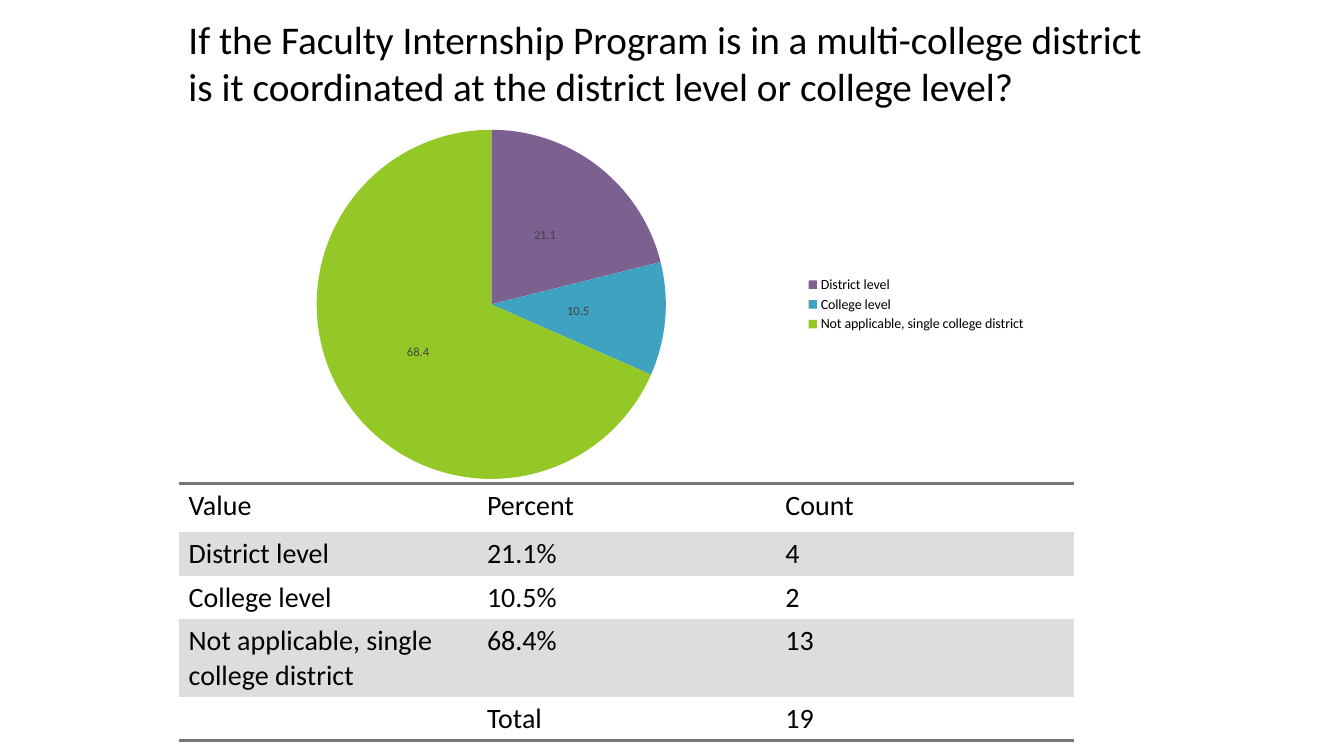
from dataclasses import dataclass

from lxml.etree import SubElement
from pptx import Presentation
from pptx.chart.data import CategoryChartData
from pptx.dml.color import RGBColor
from pptx.enum.chart import XL_CHART_TYPE as ChartType
from pptx.enum.chart import XL_LABEL_POSITION as LabelPosition
from pptx.enum.chart import XL_LEGEND_POSITION as LegendPosition
from pptx.enum.text import MSO_AUTO_SIZE as AutoSize
from pptx.oxml import parse_xml
from pptx.oxml.ns import nsdecls, qn
from pptx.util import Cm, Pt

FONT = "Calibri"
BLACK, WHITE, BAND, RULE = "000000", "FFFFFF", "DDDDDD", "777777"
LABEL_GREY = "444444"
NO_STYLE = "{2D5ABB26-0587-4C30-8999-92F81FD0307C}"
LEFT = Cm(4.5)


@dataclass
class Answer:
    name: str
    percent: float
    count: int
    color: str


ANSWERS = [
    Answer("District level", 21.1, 4, "7C608F"),
    Answer("College level", 10.5, 2, "40A2C1"),
    Answer("Not applicable, single college district", 68.4, 13, "94C826"),
]


def rgb(color: str) -> RGBColor:
    return RGBColor.from_string(color)


def style_font(font, size: float, color: str = BLACK) -> None:
    font.name = FONT
    font.size = Pt(size)
    font.color.rgb = rgb(color)


def add_question(slide) -> None:
    question = slide.shapes.add_textbox(LEFT, Cm(0.25), Cm(24.61), Cm(2.64))
    frame = question.text_frame
    frame.word_wrap = True
    frame.auto_size = AutoSize.SHAPE_TO_FIT_TEXT
    frame.text = ("If the Faculty Internship Program is in a multi-college district "
                  "is it coordinated at the district level or college level?")
    style_font(frame.paragraphs[0].runs[0].font, 28)


def add_pie(slide, answers: list[Answer]) -> None:
    data = CategoryChartData()
    data.categories = [answer.name for answer in answers]
    data.add_series("0: Series", [answer.percent for answer in answers])
    pie = slide.shapes.add_chart(ChartType.PIE, LEFT, Cm(2.92), Cm(21.62), Cm(9.5), data).chart
    style_font(pie.font, 10)
    pie.has_title = False
    pie.has_legend = True
    pie.legend.position = LegendPosition.RIGHT
    pie.legend.include_in_layout = False
    style_font(pie.legend.font, 10)

    plot = pie.plots[0]
    plot.vary_by_categories = True
    series = plot.series[0]
    for index, answer in enumerate(answers):
        fill = series.points[index].format.fill
        fill.solid()
        fill.fore_color.rgb = rgb(answer.color)
    labels = series.data_labels
    labels.show_value = True
    labels.position = LabelPosition.CENTER
    style_font(labels.font, 9, LABEL_GREY)


def add_rule(cell, side: str) -> None:
    line = parse_xml(f'<a:{side} {nsdecls("a")} w="{Pt(2)}"/>')
    SubElement(SubElement(line, qn("a:solidFill")), qn("a:srgbClr"), val=RULE)
    cell._tc.get_or_add_tcPr().insert(0, line)


def add_answer_table(slide, answers: list[Answer]) -> None:
    total = sum(answer.count for answer in answers)
    rows = [
        ("Value", "Percent", "Count"),
        *((a.name, f"{a.percent}%", str(a.count)) for a in answers),
        ("", "Total", str(total)),
    ]
    heights = [1.22, 1.04, 1.04, 1.83, 1.04]
    table = slide.shapes.add_table(len(rows), 3, LEFT, Cm(12.18), Cm(22.58), Cm(6.17)).table
    table.first_row = table.horz_banding = False
    table._tbl.tblPr.find(qn("a:tableStyleId")).text = NO_STYLE
    for column in table.columns:
        column.width = Cm(7.52)

    for r, (texts, height) in enumerate(zip(rows, heights)):
        table.rows[r].height = Cm(height)
        for c, text in enumerate(texts):
            cell = table.cell(r, c)
            cell.text = text
            paragraph = cell.text_frame.paragraphs[0]
            for part in paragraph.runs or [paragraph]:
                style_font(part.font, 20)
            cell.fill.solid()
            cell.fill.fore_color.rgb = rgb(BAND if r % 2 else WHITE)
            if r == 0:
                add_rule(cell, "lnT")
            elif r == len(rows) - 1:
                add_rule(cell, "lnB")


def main() -> None:
    deck = Presentation()
    deck.slide_width, deck.slide_height = Cm(33.87), Cm(19.05)
    slide = deck.slides.add_slide(deck.slide_layouts[6])
    add_question(slide)
    add_pie(slide, ANSWERS)
    add_answer_table(slide, ANSWERS)
    deck.save("out.pptx")


if __name__ == "__main__":
    main()
